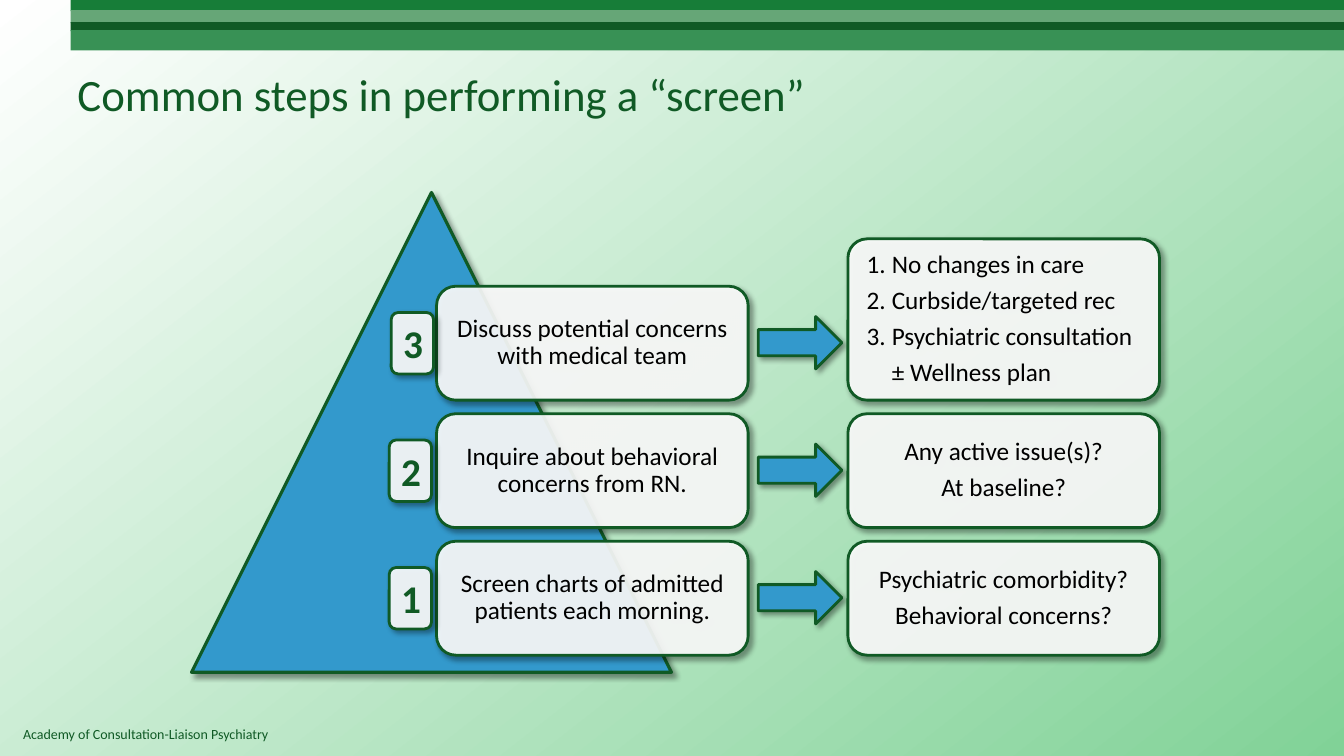
from lxml.etree import SubElement
from pptx import Presentation
from pptx.dml.color import RGBColor
from pptx.enum.shapes import MSO_SHAPE as SHAPE
from pptx.enum.text import MSO_ANCHOR as ANCHOR, PP_ALIGN as ALIGN
from pptx.oxml.ns import qn
from pptx.util import Inches, Pt

DARK_GREEN = RGBColor(0x10, 0x5A, 0x25)
BLUE = RGBColor(0x33, 0x99, 0xCC)
WHITE = RGBColor(0xFF, 0xFF, 0xFF)
BLACK = RGBColor(0x00, 0x00, 0x00)
PALE_GREEN = RGBColor(0x81, 0xD2, 0x97)
BANDS = [
    (0, 0.11, RGBColor(0x17, 0x7D, 0x38)),
    (0.1, 0.13, RGBColor(0x66, 0xA6, 0x77)),
    (0.22, 0.09, DARK_GREEN),
    (0.3, 0.2, RGBColor(0x38, 0x91, 0x55)),
]

FONT = "Calibri"
CARD_WIDTH, CARD_HEIGHT = 3.09, 1.13
FIRST_TOP, ROW_STEP = 2.84, 1.265
STEP_LEFT, ARROW_LEFT, OUTCOME_LEFT = 4.33, 7.52, 8.41
OUTCOME_HEIGHT = 1.6

STEPS = [
    ("3", 3.88, "Discuss potential concerns with medical team"),
    ("2", 3.86, "Inquire about behavioral concerns from RN."),
    ("1", 3.86, "Screen charts of admitted patients each morning."),
]
OPTIONS = ["No changes in care", "Curbside/targeted rec", "Psychiatric consultation"]
FINDINGS = [
    ["Any active issue(s)?", "At baseline?"],
    ["Psychiatric comorbidity?", "Behavioral concerns?"],
]


def set_font(paragraph, size, color, bold=False):
    font = paragraph.font
    font.name, font.size, font.bold = FONT, Pt(size), bold
    font.color.rgb = color


def add_background(slide):
    fill = slide.background.fill
    fill.gradient()
    fill.gradient_angle = 308
    for stop, color in zip(fill.gradient_stops, (WHITE, PALE_GREEN)):
        stop.color.rgb = color


def add_band(slide, top, height, color):
    band = slide.shapes.add_shape(
        SHAPE.RECTANGLE, Inches(0.7), Inches(top), Inches(12.63), Inches(height))
    band.shadow.inherit = False
    band.fill.solid()
    band.fill.fore_color.rgb = color
    band.line.fill.background()


def add_label(slide, left, top, width, height, text, size):
    label = slide.shapes.add_textbox(
        Inches(left), Inches(top), Inches(width), Inches(height))
    frame = label.text_frame
    frame.word_wrap = True
    frame.vertical_anchor = ANCHOR.MIDDLE
    frame.text = text
    set_font(frame.paragraphs[0], size, DARK_GREEN)


def add_outlined(slide, kind, left, top, width, height, color, line_width=2):
    shape = slide.shapes.add_shape(
        kind, Inches(left), Inches(top), Inches(width), Inches(height))
    shape.fill.solid()
    shape.fill.fore_color.rgb = color
    shape.line.color.rgb = DARK_GREEN
    shape.line.width = Pt(line_width)
    shape.shadow.inherit = False
    effects = shape._element.spPr.find(qn("a:effectLst"))
    shadow = SubElement(effects, qn("a:outerShdw"), blurRad=str(Pt(4)),
                        dist=str(Pt(3)), dir="2700000", rotWithShape="0")
    shadow_color = SubElement(shadow, qn("a:srgbClr"), val="000000")
    SubElement(shadow_color, qn("a:alpha"), val="40000")
    return shape


def add_panel(slide, left, top, width, height):
    panel = add_outlined(slide, SHAPE.ROUNDED_RECTANGLE, left, top, width, height, WHITE)
    fill_color = panel._element.spPr.find(qn("a:solidFill"))[0]
    SubElement(fill_color, qn("a:alpha"), val="90000")
    return panel


def add_card(slide, left, top, lines, height=CARD_HEIGHT, numbered=0):
    card = add_panel(slide, left, top, CARD_WIDTH, height)
    card.adjustments[0] = 0.19 / height
    frame = card.text_frame
    frame.word_wrap = True
    frame.vertical_anchor = ANCHOR.MIDDLE
    frame.margin_left = frame.margin_right = Inches(0.13)
    frame.margin_top = frame.margin_bottom = Inches(0.13)
    frame.text = "\n".join(lines)
    for index, paragraph in enumerate(frame.paragraphs):
        paragraph.alignment = ALIGN.LEFT if numbered else ALIGN.CENTER
        paragraph.line_spacing = 0.9
        paragraph.space_after = Pt(6.3)
        if numbered:
            indent_line(paragraph, index < numbered)
        set_font(paragraph, 18, BLACK)


def indent_line(paragraph, has_number):
    properties = paragraph._p.get_or_add_pPr()
    properties.set("marL", str(Inches(0.25)))
    properties.set("indent", str(Inches(-0.25 if has_number else 0)))
    if has_number:
        SubElement(properties, qn("a:buFont"), typeface="+mj-lt")
        SubElement(properties, qn("a:buAutoNum"), type="arabicPeriod")
    else:
        SubElement(properties, qn("a:buNone"))


def add_badge(slide, left, top, number):
    badge = add_panel(slide, left, top, 0.42, 0.61)
    frame = badge.text_frame
    frame.vertical_anchor = ANCHOR.TOP
    frame.text = number
    frame.paragraphs[0].alignment = ALIGN.CENTER
    set_font(frame.paragraphs[0], 28, DARK_GREEN, bold=True)


def main():
    prs = Presentation()
    prs.slide_width, prs.slide_height = Inches(13.33), Inches(7.5)
    slide = prs.slides.add_slide(prs.slide_layouts[6])
    add_background(slide)
    for band in BANDS:
        add_band(slide, *band)
    add_label(slide, 0.13, 7.15, 9.25, 0.27, "Academy of Consultation-Liaison Psychiatry", 10)
    add_label(slide, 0.67, 0.3, 12, 1.25, "Common steps in performing a “screen”", 32)

    add_outlined(slide, SHAPE.ISOSCELES_TRIANGLE, 1.9, 1.91, 4.76, 4.76, BLUE, 2.25)
    row_tops = [FIRST_TOP + row * ROW_STEP for row in range(len(STEPS))]
    for top, (number, badge_left, step) in zip(row_tops, STEPS):
        add_card(slide, STEP_LEFT, top, [step])
        add_outlined(slide, SHAPE.RIGHT_ARROW, ARROW_LEFT, top + 0.3, 0.83, 0.52, BLUE)
        add_badge(slide, badge_left, top + 0.26, number)

    outcome_top = FIRST_TOP + CARD_HEIGHT - OUTCOME_HEIGHT
    add_card(slide, OUTCOME_LEFT, outcome_top, OPTIONS + ["± Wellness plan"],
             OUTCOME_HEIGHT, numbered=len(OPTIONS))
    for top, findings in zip(row_tops[1:], FINDINGS):
        add_card(slide, OUTCOME_LEFT, top, findings)
    prs.save("out.pptx")


if __name__ == "__main__":
    main()
